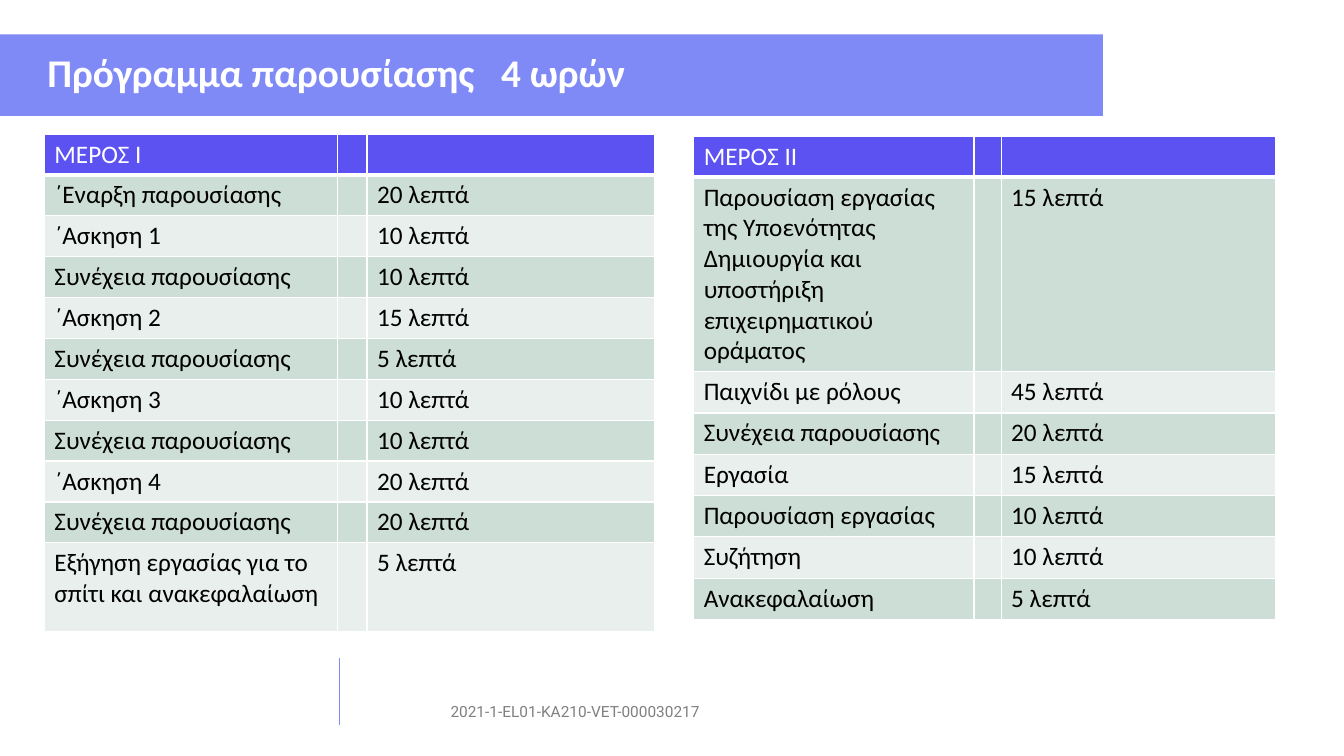
from lxml import etree
from pptx import Presentation
from pptx.dml.color import RGBColor
from pptx.enum.shapes import MSO_CONNECTOR, MSO_SHAPE
from pptx.enum.text import MSO_ANCHOR, PP_ALIGN
from pptx.oxml.ns import qn
from pptx.util import Inches, Pt

LINE = MSO_CONNECTOR.STRAIGHT
RECT = MSO_SHAPE.RECTANGLE
MIDDLE = MSO_ANCHOR.MIDDLE
LEFT = PP_ALIGN.LEFT

COLORS = {"band": "7F8AF6", "header": "5C51F1", "odd": "CDDED6", "even": "E8EFEC",
          "white": "FFFFFF", "text": "000000", "footer": "808080"}
TITLE = "Πρόγραμμα παρουσίασης\t4 ωρών"
TITLE_TAB = Inches(4.5)
FOOTER = "2021-1-EL01-KA210-VET-000030217"
TABLES = [
    {"at": (0.44, 1.33), "cols": (2.91, 0.29, 2.85),
     "heights": [0.4] * 10 + [0.88],
     "rows": [
         ("ΜΕΡΟΣ Ι", ""),
         ("΄Εναρξη παρουσίασης", "20 λεπτά"),
         ("΄Ασκηση 1", "10 λεπτά"),
         ("Συνέχεια παρουσίασης", "10 λεπτά"),
         ("΄Ασκηση 2", "15 λεπτά"),
         ("Συνέχεια παρουσίασης", "5 λεπτά"),
         ("΄Ασκηση 3", "10 λεπτά"),
         ("Συνέχεια παρουσίασης", "10 λεπτά"),
         ("΄Ασκηση 4", "20 λεπτά"),
         ("Συνέχεια παρουσίασης", "20 λεπτά"),
         ("Εξήγηση εργασίας για το σπίτι και ανακεφαλαίωση", "5 λεπτά"),
     ]},
    {"at": (6.88, 1.35), "cols": (2.78, 0.27, 2.72),
     "heights": [0.4, 1.89] + [0.41] * 6,
     "rows": [
         ("ΜΕΡΟΣ ΙΙ", ""),
         ("Παρουσίαση εργασίας της Υποενότητας Δημιουργία και υποστήριξη "
          "επιχειρηματικού οράματος", "15 λεπτά"),
         ("Παιχνίδι με ρόλους", "45 λεπτά"),
         ("Συνέχεια παρουσίασης", "20 λεπτά"),
         ("Εργασία", "15 λεπτά"),
         ("Παρουσίαση εργασίας", "10 λεπτά"),
         ("Συζήτηση", "10 λεπτά"),
         ("Ανακεφαλαίωση", "5 λεπτά"),
     ]},
]


def rgb(name):
    return RGBColor.from_string(COLORS[name])


def style(p, size, font, color, bold=False):
    for r in p.runs:
        r.font.size = Pt(size)
        r.font.name = font
        r.font.bold = bold
        r.font.color.rgb = rgb(color)


def add_borders(cell, bottom):
    tcPr = cell._tc.get_or_add_tcPr()
    for side, width in (("L", 1), ("R", 1), ("T", 1), ("B", bottom)):
        ln = etree.SubElement(tcPr, qn(f"a:ln{side}"), w=str(Pt(width)))
        fill = etree.SubElement(ln, qn("a:solidFill"))
        etree.SubElement(fill, qn("a:srgbClr"), val=COLORS["white"])


def add_schedule(s, at, cols, heights, rows):
    box = [Inches(v) for v in (*at, sum(cols), sum(heights))]
    table = s.shapes.add_table(len(rows), len(cols), *box).table
    for column, width in zip(table.columns, cols):
        column.width = Inches(width)
    for i, (activity, duration) in enumerate(rows):
        table.rows[i].height = Inches(heights[i])
        fill = "header" if i == 0 else "odd" if i % 2 else "even"
        for j, text in enumerate((activity, "", duration)):
            cell = table.cell(i, j)
            add_borders(cell, 3 if i == 0 else 1)
            cell.fill.solid()
            cell.fill.fore_color.rgb = rgb(fill)
            cell.text_frame.text = text
            style(cell.text_frame.paragraphs[0], 18, "Calibri", "text" if i else "white")


def add_title(s):
    band = s.shapes.add_shape(RECT, 0, Inches(0.34), Inches(10.94), Inches(0.81))
    band.shadow.inherit = False
    band.fill.solid()
    band.fill.fore_color.rgb = rgb("band")
    band.line.fill.background()
    title = s.shapes.title
    band._element.addnext(title._element)
    title.left, title.top = Inches(0.37), Inches(0.52)
    title.width, title.height = Inches(6.51), Inches(0.45)
    tf = title.text_frame
    tf.word_wrap = True
    tf.vertical_anchor = MIDDLE
    tf.text = TITLE
    p = tf.paragraphs[0]
    p.alignment = LEFT
    p.line_spacing = 0.9
    p.space_before = Pt(0)
    tabs = etree.SubElement(p._p.get_or_add_pPr(), qn("a:tabLst"))
    etree.SubElement(tabs, qn("a:tab"), pos=str(TITLE_TAB), algn="l")
    style(p, 28, "Calibri", "white", True)


def add_footer(s):
    rule = s.shapes.add_connector(LINE, Inches(3.37), Inches(6.53), Inches(3.37), Inches(7.19))
    rule.line.color.rgb = rgb("band")
    rule.line.width = Pt(1)
    etree.SubElement(rule._element.spPr, qn("a:effectLst"))
    tf = s.shapes.add_textbox(Inches(4.37), Inches(6.92), Inches(3.63), Inches(0.29)).text_frame
    tf.word_wrap = True
    tf.text = FOOTER
    style(tf.paragraphs[0], 11, "Roboto", "footer")


def main():
    prs = Presentation()
    prs.slide_width, prs.slide_height = Inches(13.33), Inches(7.5)
    s = prs.slides.add_slide(prs.slide_layouts[5])
    add_footer(s)
    add_title(s)
    for schedule in TABLES:
        add_schedule(s, **schedule)
    prs.save("out.pptx")


if __name__ == "__main__":
    main()
